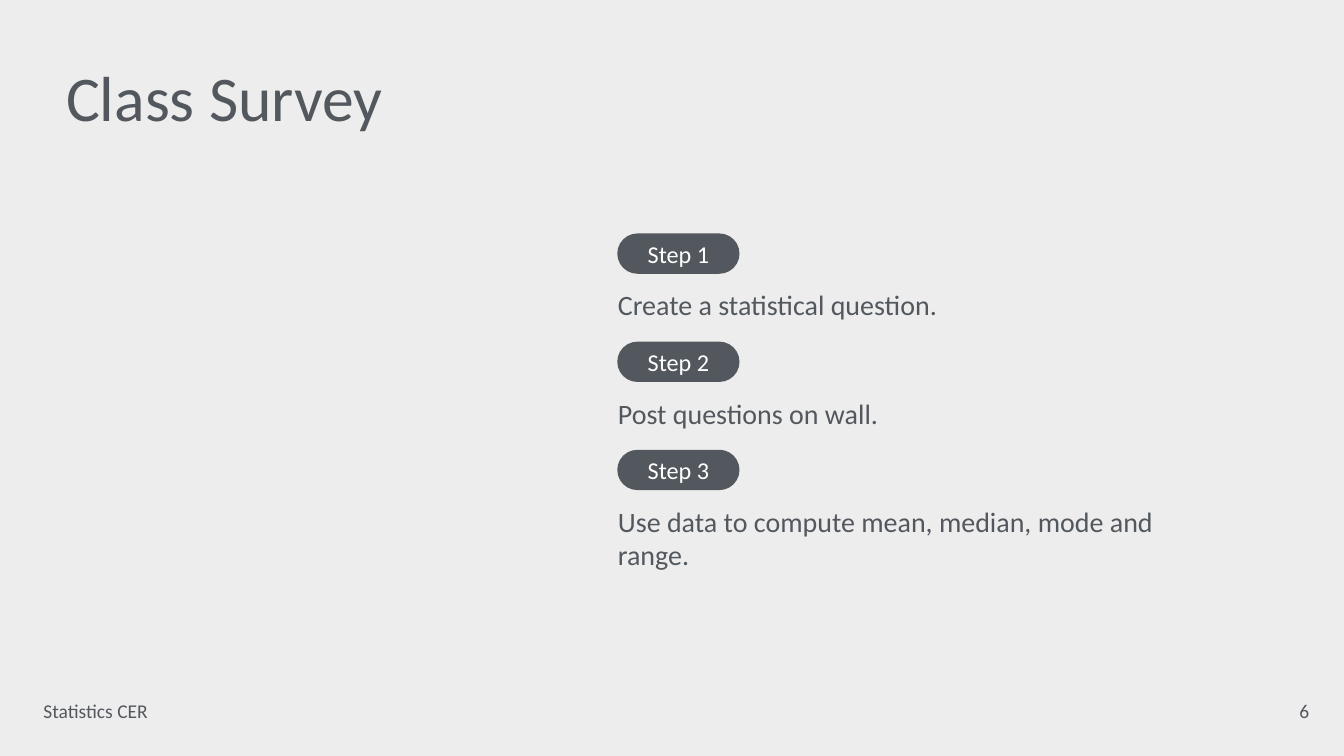
from pptx import Presentation
from pptx.dml.color import RGBColor
from pptx.enum.shapes import MSO_SHAPE
from pptx.enum.text import MSO_ANCHOR, PP_ALIGN
from pptx.util import Emu, Pt

PILL = MSO_SHAPE.ROUNDED_RECTANGLE
TOP, MIDDLE = MSO_ANCHOR.TOP, MSO_ANCHOR.MIDDLE
LEFT, CENTER = PP_ALIGN.LEFT, PP_ALIGN.CENTER
TITLE_ONLY = 5

EMU_PER_PX = 9144  # 100 px to the inch
FONT = "Calibri"
SLATE, PALE, WHITE = "53585E", "EDEDED", "FFFFFF"

STEPS = [
    "Create a statistical question.",
    "Post questions on wall.",
    "Use data to compute mean, median, mode and range.",
]
STEPS_LEFT, STEPS_TOP, STEP_PITCH = 1010, 382, 177
DESCRIPTION_OFFSET = 89


def px(length):
    return Emu(length * EMU_PER_PX)


def color(hex_string):
    return RGBColor.from_string(hex_string)


def set_text(shape, text, size, hex_color=SLATE, align=LEFT, anchor=TOP):
    frame = shape.text_frame
    frame.margin_left = frame.margin_right = 0
    frame.margin_top = frame.margin_bottom = 0
    frame.word_wrap = True
    frame.vertical_anchor = anchor
    frame.text = text
    paragraph = frame.paragraphs[0]
    paragraph.alignment = align
    paragraph.font.name = FONT
    paragraph.font.size = Pt(size)
    paragraph.font.color.rgb = color(hex_color)


def set_title(slide, text, left, top, width, height):
    title = slide.shapes.title
    title.left, title.top = px(left), px(top)
    title.width, title.height = px(width), px(height)
    set_text(title, text, 75)


def add_text(slide, text, left, top, width, height, size):
    box = slide.shapes.add_textbox(px(left), px(top), px(width), px(height))
    set_text(box, text, size)


def add_pill(slide, text, left, top):
    pill = slide.shapes.add_shape(PILL, px(left), px(top), px(200), px(66))
    pill.adjustments[0] = 0.5
    pill.shadow.inherit = False
    pill.fill.solid()
    pill.fill.fore_color.rgb = color(SLATE)
    pill.line.fill.background()
    set_text(pill, text, 28.5, WHITE, CENTER, MIDDLE)


def add_step(slide, number, description):
    top = STEPS_TOP + (number - 1) * STEP_PITCH
    add_pill(slide, f"Step {number}", STEPS_LEFT, top)
    add_text(slide, description, STEPS_LEFT + 1, top + DESCRIPTION_OFFSET,
             997, 60, 33)


def main():
    presentation = Presentation()
    presentation.slide_width, presentation.slide_height = px(2199), px(1237)
    slide = presentation.slides.add_slide(presentation.slide_layouts[TITLE_ONLY])
    slide.background.fill.solid()
    slide.background.fill.fore_color.rgb = color(PALE)

    set_title(slide, "Class Survey", 108, 95, 942, 127)
    for number, description in enumerate(STEPS, start=1):
        add_step(slide, number, description)
    add_text(slide, "Statistics CER", 71, 1143, 200, 39, 23)
    add_text(slide, "6", 2126, 1143, 38, 39, 23)

    presentation.save("out.pptx")


if __name__ == "__main__":
    main()
